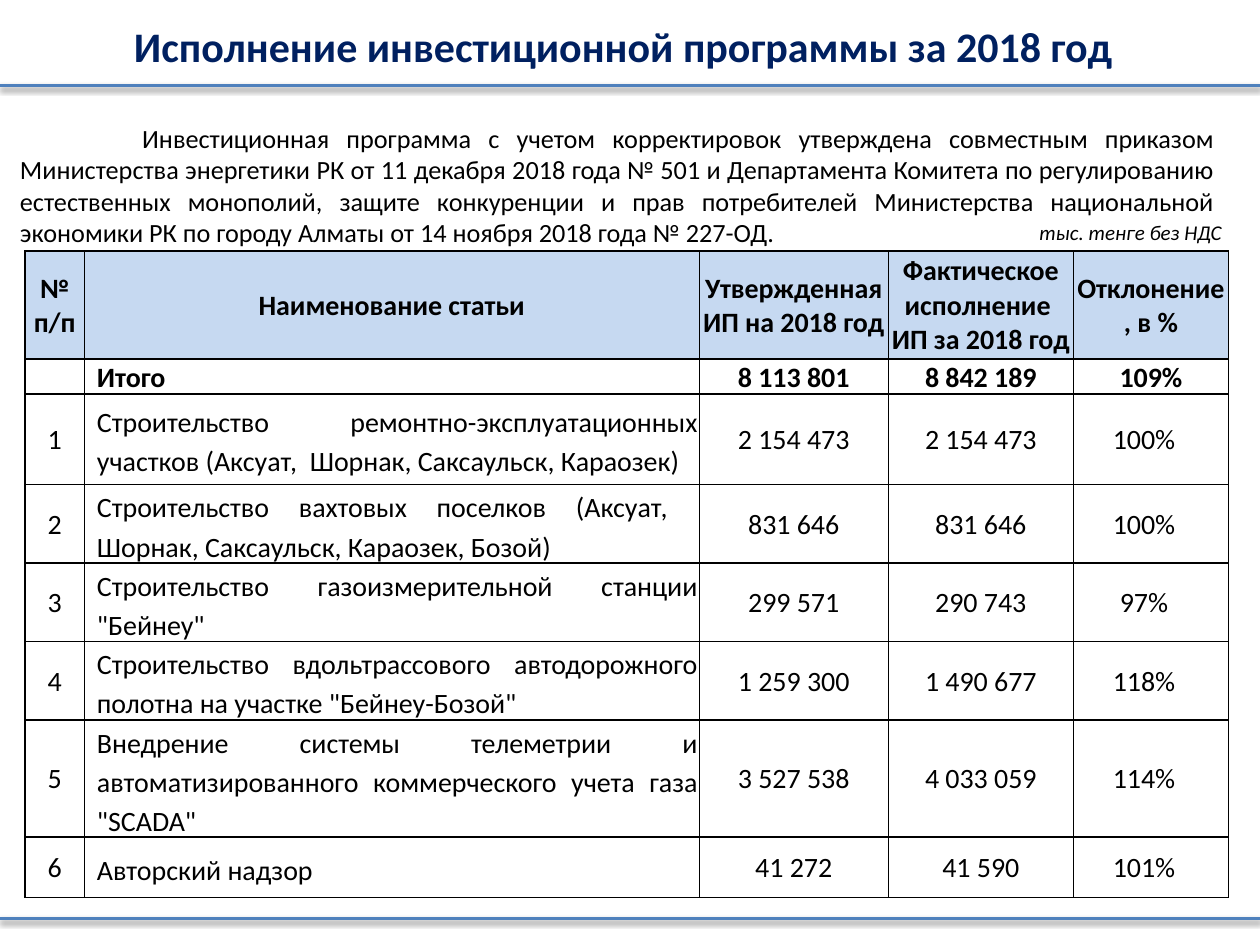
from lxml import etree
from pptx import Presentation
from pptx.dml.color import RGBColor
from pptx.enum.shapes import MSO_CONNECTOR as Connector
from pptx.enum.text import MSO_ANCHOR as Anchor, PP_ALIGN as Align
from pptx.oxml.ns import qn
from pptx.util import Inches, Pt

WIDTH, HEIGHT = Inches(10), Inches(7.5)
TITLE_ONLY = 5
BLACK, NAVY, BLUE, PALE = "000000", "002060", "4F81BD", "C6D9F1"
CELL_SIZE = 16

COLUMNS = [0.47, 4.88, 1.5, 1.47, 1.23]
ROWS = [0.86, 0.27, 0.72, 0.61, 0.62, 0.61, 0.9, 0.48]
HEADINGS = ["№ п/п", "Наименование статьи", "Утвержденная ИП на 2018 год",
            "Фактическое исполнение  ИП за 2018 год", "Отклонение, в %"]
TOTAL = ["", "Итого", "8 113 801", "8 842 189", "109%"]
ITEMS = [
    ["Строительство ремонтно-эксплуатационных участков (Аксуат,  Шорнак, Саксаульск, Караозек)",
     "2 154 473", "2 154 473", "100%"],
    ["Строительство вахтовых поселков (Аксуат,  Шорнак, Саксаульск, Караозек, Бозой)",
     "831 646", "831 646", "100%"],
    ['Строительство газоизмерительной станции "Бейнеу"',
     "299 571", "290 743", "97%"],
    ['Строительство вдольтрассового автодорожного полотна на участке "Бейнеу-Бозой"',
     "1 259 300", "1 490 677", "118%"],
    ['Внедрение системы телеметрии и автоматизированного коммерческого учета газа "SCADA"',
     "3 527 538", "4 033 059", "114%"],
    ["Авторский надзор", "41 272", "41 590", "101%"],
]
APPROVAL = (
    "Инвестиционная программа с учетом корректировок утверждена совместным приказом "
    "Министерства энергетики РК от 11 декабря 2018 года № 501 и Департамента Комитета "
    "по регулированию естественных монополий, защите конкуренции и прав потребителей "
    "Министерства национальной экономики РК по городу Алматы от 14 ноября 2018 года "
    "№ 227-ОД.")


def colour(value):
    return RGBColor.from_string(value)


def apply(target, **values):
    for name, value in values.items():
        setattr(target, name, value)


def write(frame, text, size, ink=BLACK, align=Align.LEFT, spacing=None, **style):
    paragraph = frame.paragraphs[0]
    apply(paragraph, alignment=align, line_spacing=spacing)
    if text:
        run = paragraph.add_run()
        run.text = text
        apply(run.font, name="Calibri", size=Pt(size), **style)
        run.font.color.rgb = colour(ink)
    else:
        paragraph._p.get_or_add_endParaRPr().set("sz", str(size * 100))
    return paragraph


def indent(paragraph, left=0, first=0):
    properties = paragraph._p.get_or_add_pPr()
    properties.set("marL", str(Inches(left)))
    properties.set("indent", str(Inches(first)))


def add_rule(slide, top):
    """Draw a full-width line with a soft shadow under it."""
    rule = slide.shapes.add_connector(Connector.STRAIGHT, 0, top, WIDTH, top)
    rule.line.color.rgb = colour(BLUE)
    rule.line.width = Pt(2)
    effects = etree.SubElement(rule._element.spPr, qn("a:effectLst"))
    shadow = etree.SubElement(effects, qn("a:outerShdw"), blurRad=str(Pt(3.1)),
                              dist=str(Pt(1.6)), dir="5400000", rotWithShape="0")
    ink = etree.SubElement(shadow, qn("a:srgbClr"), val=BLACK)
    etree.SubElement(ink, qn("a:alpha"), val="38000")


def place_title(slide, left, top, width, height):
    title = slide.shapes.title
    apply(title, left=left, top=top, width=width, height=height)
    title.text_frame.vertical_anchor = Anchor.MIDDLE
    write(title.text_frame, "Исполнение инвестиционной программы за 2018 год ",
          24, NAVY, Align.CENTER, bold=True)


def add_approval(slide, *box):
    frame = slide.shapes.add_textbox(*box).text_frame
    frame.word_wrap = True
    indent(write(frame, APPROVAL, 15, align=Align.JUSTIFY), first=0.97)


def add_unit_note(slide, *box):
    frame = slide.shapes.add_textbox(*box).text_frame
    frame.word_wrap = False
    write(frame, "тыс. тенге без НДС", 12, italic=True)


def draw_borders(cell):
    properties = cell._tc.get_or_add_tcPr()
    for position, side in enumerate(("lnL", "lnR", "lnT", "lnB")):
        border = etree.Element(qn(f"a:{side}"), w=str(Pt(1)))
        fill = etree.SubElement(border, qn("a:solidFill"))
        etree.SubElement(fill, qn("a:srgbClr"), val=BLACK)
        properties.insert(position, border)


def fill_cell(cell, text, row, column):
    heading, item = row == 0, row > 1
    named = column == 1 and not heading
    percent = item and column == len(COLUMNS) - 1
    apply(cell, vertical_anchor=Anchor.MIDDLE, margin_left=Inches(0.01),
          margin_top=Inches(0.01), margin_bottom=0,
          margin_right=Inches(0.12 if percent else 0.01))
    if heading:
        cell.fill.solid()
        cell.fill.fore_color.rgb = colour(PALE)
    else:
        cell.fill.background()
    paragraph = write(cell.text_frame, text, CELL_SIZE, bold=not item,
                      align=Align.JUSTIFY if named else Align.CENTER,
                      spacing=1.15 if named and item else None)
    if named:
        indent(paragraph, left=0.09)
    draw_borders(cell)


def add_programme_table(slide, left, top):
    numbered = [[str(number), *item] for number, item in enumerate(ITEMS, 1)]
    content = [HEADINGS, TOTAL, *numbered]
    table = slide.shapes.add_table(len(ROWS), len(COLUMNS), left, top,
                                   Inches(sum(COLUMNS)), Inches(sum(ROWS))).table
    apply(table, first_row=False, horz_banding=False)
    for column, width in zip(table.columns, COLUMNS):
        column.width = Inches(width)
    for row, height in zip(table.rows, ROWS):
        row.height = Inches(height)
    for row, texts in enumerate(content):
        for column, text in enumerate(texts):
            fill_cell(table.cell(row, column), text, row, column)


def build_slide(deck):
    slide = deck.slides.add_slide(deck.slide_layouts[TITLE_ONLY])
    place_title(slide, 0, Inches(0.05), Inches(9.97), Inches(0.63))
    add_rule(slide, Inches(0.68))
    add_unit_note(slide, Inches(8.15), Inches(1.69), Inches(1.67), Inches(0.3))
    add_programme_table(slide, Inches(0.2), Inches(1.99))
    add_approval(slide, Inches(0.06), Inches(0.92), Inches(9.68), Inches(1.13))
    add_rule(slide, Inches(7.29))


def main():
    deck = Presentation()
    apply(deck, slide_width=WIDTH, slide_height=HEIGHT)
    build_slide(deck)
    deck.save("out.pptx")


if __name__ == "__main__":
    main()
